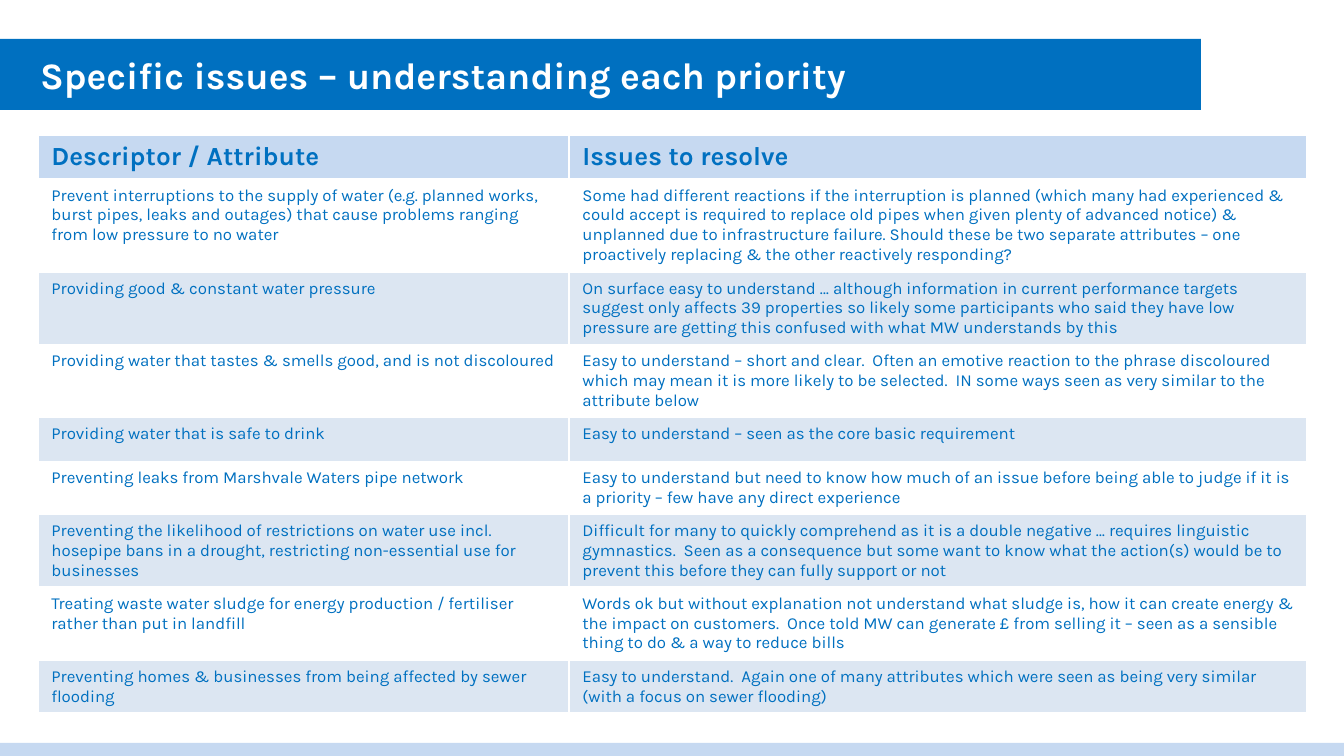
from dataclasses import dataclass

from pptx import Presentation
from pptx.dml.color import RGBColor
from pptx.enum.shapes import MSO_SHAPE
from pptx.enum.text import MSO_ANCHOR, MSO_AUTO_SIZE, PP_ALIGN
from pptx.util import Pt

SCALE = 914400 / 134.4  # EMU in one px


@dataclass(frozen=True)
class Theme:
    face: str = "Karla"
    blue: str = "0070C0"
    pale: str = "C6D9F1"
    band: str = "DCE6F2"
    white: str = "FFFFFF"
    title: int = 20
    head: int = 14
    body: int = 9


THEME = Theme()

TITLE = "Specific issues – understanding each priority"
HEADS = ("Descriptor / Attribute", "Issues to resolve")
# Attribute, issues, row height in px
ISSUES = [
    ("Prevent interruptions to the supply of water (e.g. planned works, burst pipes, "
     "leaks and outages) that cause problems ranging from low pressure to no water",
     "Some had different reactions if the interruption is planned (which many had "
     "experienced & could accept is required to replace old pipes when given plenty of "
     "advanced notice) & unplanned due to infrastructure failure. Should these be two "
     "separate attributes – one proactively replacing & the other reactively responding?",
     93),
    ("Providing good & constant water pressure",
     "On surface easy to understand … although information in current performance "
     "targets suggest only affects 39 properties so likely some participants who said "
     "they have low pressure are getting this confused with what MW understands by this",
     72),
    ("Providing water that tastes & smells good, and is not discoloured",
     "Easy to understand – short and clear.  Often an emotive reaction to the phrase "
     "discoloured which may mean it is more likely to be selected.  IN some ways seen as "
     "very similar to the attribute below",
     73),
    ("Providing water that is safe to drink",
     "Easy to understand – seen as the core basic requirement",
     44),
    ("Preventing leaks from Marshvale Waters pipe network",
     "Easy to understand but need to know how much of an issue before being able to "
     "judge if it is a priority – few have any direct experience",
     53),
    ("Preventing the likelihood of restrictions on water use incl. hosepipe bans in a "
     "drought, restricting non-essential use for businesses",
     "Difficult for many to quickly comprehend as it is a double negative … requires "
     "linguistic gymnastics.  Seen as a consequence but some want to know what the "
     "action(s) would be to prevent this before they can fully support or not",
     72),
    ("Treating waste water sludge for energy production / fertiliser rather than put in "
     "landfill",
     "Words ok but without explanation not understand what sludge is, how it can create "
     "energy & the impact on customers.  Once told MW can generate £ from selling it – "
     "seen as a sensible thing to do & a way to reduce bills",
     73),
    ("Preventing homes & businesses from being affected by sewer flooding",
     "Easy to understand.  Again one of many attributes which were seen as being very "
     "similar (with a focus on sewer flooding)",
     53),
]


def px(count):
    return round(count * SCALE)


def style(item, **values):
    for name, value in values.items():
        setattr(item, name, value)


def paint(item, color):
    item.fill.solid()
    item.fill.fore_color.rgb = RGBColor.from_string(color)


def write(frame, text, size, color, bold=False):
    para = frame.paragraphs[0]
    para.alignment = PP_ALIGN.LEFT
    run = para.add_run()
    run.text = text
    style(run.font, name=THEME.face, size=Pt(size), bold=bold)
    run.font.color.rgb = RGBColor.from_string(color)


def add_bar(slide, left, top, width, height):
    bar = slide.shapes.add_shape(
        MSO_SHAPE.RECTANGLE, px(left), px(top), px(width), px(height))
    bar.shadow.inherit = False
    paint(bar, THEME.pale)
    bar.line.fill.background()


def set_title(slide, left, top, width, height):
    title = slide.shapes.title
    style(title, left=px(left), top=px(top), width=px(width), height=px(height))
    paint(title, THEME.blue)
    style(title.text_frame, margin_left=px(40), word_wrap=True,
          auto_size=MSO_AUTO_SIZE.NONE, vertical_anchor=MSO_ANCHOR.MIDDLE)
    write(title.text_frame, TITLE, THEME.title, THEME.white, True)


def add_grid(slide, left, top, widths, head):
    rows = [(*HEADS, head), *ISSUES]
    tall = sum(row[-1] for row in rows)
    grid = slide.shapes.add_table(
        len(rows), len(widths), px(left), px(top), px(sum(widths)), px(tall)).table
    for col, width in zip(grid.columns, widths):
        col.width = px(width)
    for index, (*texts, height) in enumerate(rows):
        grid.rows[index].height = px(height)
        # Header first, then white and tinted rows in turn
        first = index == 0
        fill = THEME.pale if first else (THEME.band, THEME.white)[index % 2]
        size = THEME.head if first else THEME.body
        for cell, text in zip(grid.rows[index].cells, texts):
            paint(cell, fill)
            write(cell.text_frame, text, size, THEME.blue, first)


def main():
    deck = Presentation()
    style(deck, slide_width=px(1344), slide_height=px(756))
    slide = deck.slides.add_slide(deck.slide_layouts[5])

    # Footer strip, title band, table
    add_bar(slide, 0, 743, 1344, 17)
    set_title(slide, 0, 39, 1201, 71)
    add_grid(slide, 38, 135, (531, 738), 44)

    deck.save("out.pptx")


if __name__ == "__main__":
    main()
